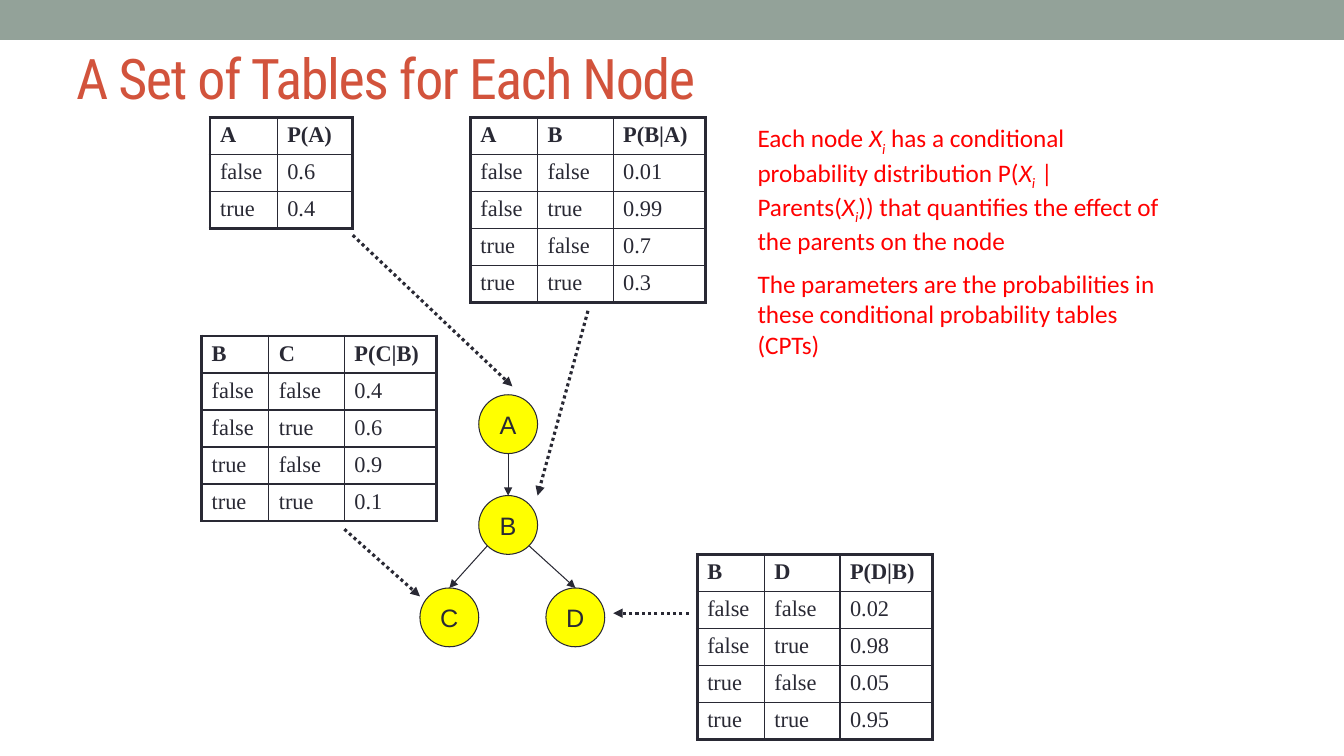
from lxml import etree
from pptx import Presentation
from pptx import util as u
from pptx.dml.color import RGBColor
from pptx.enum import dml, shapes, text
from pptx.oxml import ns

PX = 9525
INK = "292934"


def px(*lengths):
    return [u.Emu(length * PX) for length in lengths]


def colour(value):
    return RGBColor.from_string(value)


def set_all(target, values):
    for name, value in values.items():
        setattr(target, name, value)


class NetworkSlide:
    title_font = {"name": "Roboto Condensed", "size": u.Pt(40)}
    note_font = {"name": "Calibri", "size": u.Pt(18)}
    table_font = {"name": "Times New Roman", "size": u.Pt(16)}
    node_font = {"name": "Arial", "size": u.Pt(18)}
    thin, thick = u.Pt(1), u.Pt(2.25)
    row_height = 35

    def __init__(self, deck):
        self.slide = deck.slides.add_slide(deck.slide_layouts[6])
        self.shapes = self.slide.shapes

    def words(self, paragraph, wording, font, ink, **extra):
        run = paragraph.add_run()
        run.text = wording
        set_all(run.font, {**font, **extra})
        run.font.color.rgb = colour(ink)
        return run._r.get_or_add_rPr()

    def solid(self, kind, box, fill):
        shape = self.shapes.add_shape(kind, *px(*box))
        shape.shadow.inherit = False
        shape.fill.solid()
        shape.fill.fore_color.rgb = colour(fill)
        shape.line.fill.background()
        return shape

    def band(self, box, fill):
        self.solid(shapes.MSO_SHAPE.RECTANGLE, box, fill)

    def text_frame(self, box, anchor):
        frame = self.shapes.add_textbox(*px(*box)).text_frame
        set_all(frame, {"word_wrap": True, "vertical_anchor": anchor})
        return frame

    def title(self, box, wording, ink):
        frame = self.text_frame(box, text.MSO_ANCHOR.MIDDLE)
        self.words(frame.paragraphs[0], wording, self.title_font, ink).set("spc", "-100")

    def note(self, box, paragraphs, ink):
        frame = self.text_frame(box, text.MSO_ANCHOR.TOP)
        for index, pieces in enumerate(paragraphs):
            paragraph = frame.add_paragraph() if index else frame.paragraphs[0]
            if index:
                paragraph.space_before = u.Pt(9)
            for position, piece in enumerate(pieces):
                if position:
                    self.words(paragraph, "X", self.note_font, ink, italic=True)
                    subscript = self.words(paragraph, "i", self.note_font, ink, italic=True)
                    subscript.set("baseline", "-25000")
                self.words(paragraph, piece, self.note_font, ink)

    def border(self, cell, side, width):
        properties = cell._tc.get_or_add_tcPr()
        line = etree.SubElement(properties, ns.qn(f"a:ln{side}"), w=str(width))
        fill = etree.SubElement(line, ns.qn("a:solidFill"))
        etree.SubElement(fill, ns.qn("a:srgbClr"), val=INK)

    def probability_table(self, left, top, widths, rows):
        last_row, last_column = len(rows) - 1, len(widths) - 1
        size = sum(widths), self.row_height * len(rows)
        table = self.shapes.add_table(len(rows), len(widths), *px(left, top, *size)).table
        set_all(table, {"first_row": False, "horz_banding": False})
        for column, width in zip(table.columns, px(*widths)):
            column.width = width
        for r, values in enumerate(rows):
            for c, value in enumerate(values):
                cell = table.cell(r, c)
                outer = {"L": c == 0, "R": c == last_column, "T": r == 0, "B": r == last_row}
                for side, is_outer in outer.items():
                    self.border(cell, side, self.thick if is_outer else self.thin)
                cell.fill.background()
                self.words(cell.text_frame.paragraphs[0], value, self.table_font, INK, bold=r == 0)

    def node(self, left, top, letter):
        circle = self.solid(shapes.MSO_SHAPE.OVAL, (left, top, 56, 56), "FFFF00")
        circle.line.color.rgb = colour(INK)
        circle.line.width = u.Pt(0.75)
        frame = circle.text_frame
        set_all(frame, {"word_wrap": False, "vertical_anchor": text.MSO_ANCHOR.MIDDLE})
        frame.paragraphs[0].alignment = text.PP_ALIGN.CENTER
        self.words(frame.paragraphs[0], letter, self.node_font, INK)

    def arrow(self, ends, dotted):
        arrow = self.shapes.add_connector(shapes.MSO_CONNECTOR.STRAIGHT, *px(*ends))
        arrow.line.color.rgb = colour(INK)
        arrow.line.width = self.thick if dotted else u.Pt(0.75)
        if dotted:
            arrow.line.dash_style = dml.MSO_LINE.ROUND_DOT
        properties = arrow._element.spPr
        etree.SubElement(properties.find(ns.qn("a:ln")), ns.qn("a:tailEnd"), type="triangle")
        etree.SubElement(properties, ns.qn("a:effectLst"))


def conditional_rows(parent, child, probabilities):
    cases = [(p, c) for p in ("false", "true") for c in ("false", "true")]
    header = (parent, child, f"P({child}|{parent})")
    return [header] + [(*case, value) for case, value in zip(cases, probabilities)]


def main():
    deck = Presentation()
    deck.slide_width, deck.slide_height = px(1280, 720)
    network = NetworkSlide(deck)

    network.band((0, 0, 1280, 38), "93A299")
    network.title((63, 29, 816, 88), "A Set of Tables for Each Node", "D2533C")
    network.note((712, 112, 408, 228), [
        ["Each node ", " has a conditional probability distribution P(", " | Parents(",
         ")) that quantifies the effect of the parents on the node"],
        ["The parameters are the probabilities in these conditional probability tables (CPTs)"],
    ], "FF0000")

    network.probability_table(
        200, 112, (64, 72), [("A", "P(A)"), ("false", "0.6"), ("true", "0.4")])
    for left, top, parent, child, probabilities in (
        (448, 112, "A", "B", ("0.01", "0.99", "0.7", "0.3")),
        (192, 320, "B", "C", ("0.4", "0.6", "0.9", "0.1")),
        (664, 528, "B", "D", ("0.02", "0.98", "0.05", "0.95")),
    ):
        rows = conditional_rows(parent, child, probabilities)
        network.probability_table(left, top, (64, 72, 88), rows)

    for left, top, letter in (
        (456, 376, "A"), (456, 472, "B"), (400, 560, "C"), (520, 560, "D"),
    ):
        network.node(left, top, letter)

    for edge in ((484, 432, 484, 472), (464, 520, 428, 560), (504, 520, 548, 560)):
        network.arrow(edge, dotted=False)
    for pointer in (
        (336, 224, 488, 368), (560, 296, 512, 472),
        (656, 584, 584, 584), (328, 504, 400, 568),
    ):
        network.arrow(pointer, dotted=True)

    deck.save("out.pptx")


if __name__ == "__main__":
    main()
